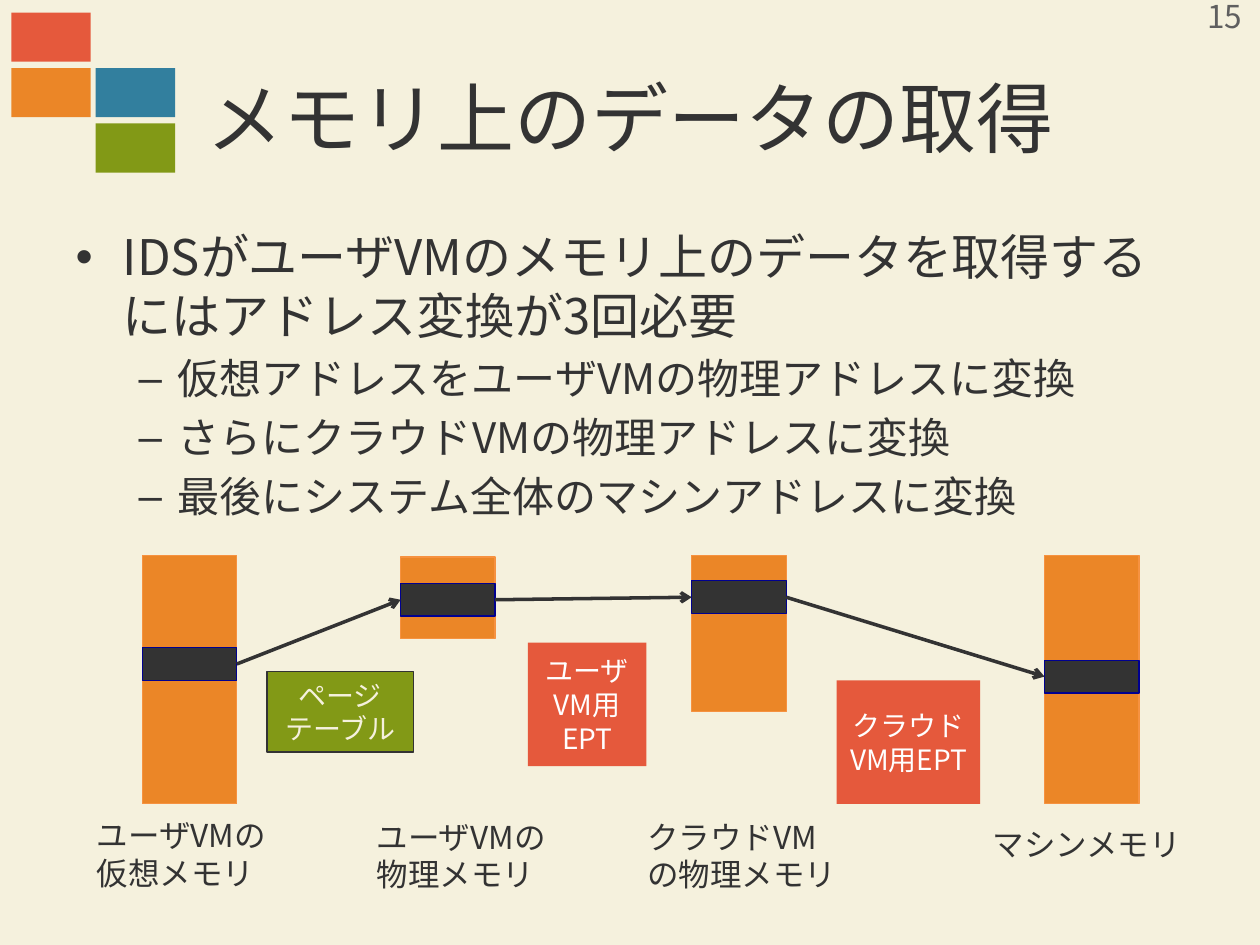
from lxml import etree
from pptx import Presentation
from pptx.dml.color import RGBColor
from pptx.enum.shapes import MSO_CONNECTOR, MSO_SHAPE
from pptx.enum.text import MSO_ANCHOR, MSO_AUTO_SIZE, PP_ALIGN
from pptx.oxml.ns import qn
from pptx.util import Inches, Pt

RECTANGLE = MSO_SHAPE.RECTANGLE
STRAIGHT = MSO_CONNECTOR.STRAIGHT
MIDDLE, TOP = MSO_ANCHOR.MIDDLE, MSO_ANCHOR.TOP
CENTER, LEFT = PP_ALIGN.CENTER, PP_ALIGN.LEFT
FONT = "Noto Sans CJK JP"
COLORS = {
    "cream": "F5F1DD", "ink": "333333", "gray": "5F5F5F", "white": "FFFFFF",
    "red": "E5593C", "green": "829916", "blue": "327F9E", "orange": "EB8627",
    "memory_edge": "F69240", "band_edge": "000090",
}


def write(box, lines, size, color="ink", align=None, anchor=None):
    frame = box.text_frame
    frame.word_wrap = True
    frame.auto_size = MSO_AUTO_SIZE.NONE
    if anchor is not None:
        frame.vertical_anchor = anchor
    frame.text = "\n".join(lines)
    for para in frame.paragraphs:
        para.alignment = align
        para.font.size = Pt(size)
        para.font.name = FONT
        para.font.color.rgb = RGBColor.from_string(COLORS[color])
        properties = para._p.pPr.find(qn("a:defRPr"))
        etree.SubElement(properties, qn("a:ea"), typeface=FONT)


def add_block(left, top, width, height, fill, edge=None):
    block = page.shapes.add_shape(
        RECTANGLE, Inches(left), Inches(top), Inches(width), Inches(height))
    block.shadow.inherit = False
    block.fill.solid()
    block.fill.fore_color.rgb = RGBColor.from_string(COLORS[fill])
    if edge:
        block.line.color.rgb = RGBColor.from_string(COLORS[edge])
        block.line.width = Pt(0.75)
    else:
        block.line.fill.background()
    return block


deck = Presentation()
deck.slide_width, deck.slide_height = Inches(10), Inches(7.5)
page = deck.slides.add_slide(deck.slide_layouts[1])
page.background.fill.solid()
page.background.fill.fore_color.rgb = RGBColor.from_string(COLORS["cream"])

for left, top, color in [(0.09, 0.1, "red"), (0.76, 0.98, "green"),
                         (0.76, 0.54, "blue"), (0.09, 0.54, "orange")]:
    add_block(left, top, 0.63, 0.39, color)

title = page.shapes.title
title.left, title.top = Inches(0.5), Inches(0.3)
title.width, title.height = Inches(9), Inches(1.25)
write(title, ["メモリ上のデータの取得"], 44, align=CENTER, anchor=MIDDLE)

body = page.placeholders[1]
body.left, body.top = Inches(0.5), Inches(1.75)
body.width, body.height = Inches(9), Inches(4.95)
write(body, [
    "IDSがユーザVMのメモリ上のデータを取得するにはアドレス変換が3回必要",
    "仮想アドレスをユーザVMの物理アドレスに変換",
    "さらにクラウドVMの物理アドレスに変換",
    "最後にシステム全体のマシンアドレスに変換",
], 28)
for para in body.text_frame.paragraphs[1:]:
    para.level = 1
    para.font.size = Pt(24)

labels = [
    (9.35, -0.02, 0.74, 0.3, ["15"], "gray", CENTER, MIDDLE),
    (0.67, 6.43, 1.59, 0.71, ["ユーザVMの", "仮想メモリ"], "ink", LEFT, TOP),
    (2.89, 6.44, 1.59, 0.71, ["ユーザVMの", "物理メモリ"], "ink", LEFT, TOP),
    (5.04, 6.44, 1.72, 0.71, ["クラウドVM", "の物理メモリ"], "ink", LEFT, TOP),
    (7.78, 6.5, 1.72, 0.4, ["マシンメモリ"], "ink", LEFT, TOP),
]
for left, top, width, height, lines, color, align, anchor in labels:
    label = page.shapes.add_textbox(
        Inches(left), Inches(top), Inches(width), Inches(height))
    write(label, lines, 18, color, align, anchor)

memories = [(1.13, 4.41, 1.97, 5.14), (3.18, 4.42, 0.65, 4.63),
            (5.49, 4.41, 1.24, 4.61), (8.29, 4.41, 1.97, 5.24)]
bands = []
for left, top, height, band_top in memories:
    add_block(left, top, 0.75, height, "orange", "memory_edge")
    bands.append(add_block(left, band_top, 0.75, 0.26, "ink", "band_edge"))

for source, target in zip(bands, bands[1:]):
    arrow = page.shapes.add_connector(STRAIGHT, 0, 0, 0, 0)
    arrow.begin_connect(source, 3)
    arrow.end_connect(target, 1)
    arrow.line.color.rgb = RGBColor.from_string(COLORS["ink"])
    arrow.line.width = Pt(2)
    etree.SubElement(arrow.line._get_or_add_ln(), qn("a:tailEnd"), type="arrow")
    etree.SubElement(arrow._element.spPr, qn("a:effectLst"))

tables = [
    (2.12, 5.33, 1.16, 0.64, "green", "ink", ["ページ", "テーブル"], "cream"),
    (4.19, 5.1, 0.94, 0.98, "red", None, ["ユーザVM用EPT"], "white"),
    (6.64, 5.4, 1.14, 0.98, "red", None, ["クラウドVM用EPT"], "white"),
]
for left, top, width, height, fill, edge, lines, color in tables:
    table_box = add_block(left, top, width, height, fill, edge)
    write(table_box, lines, 16, color, CENTER, MIDDLE)

deck.save("out.pptx")
